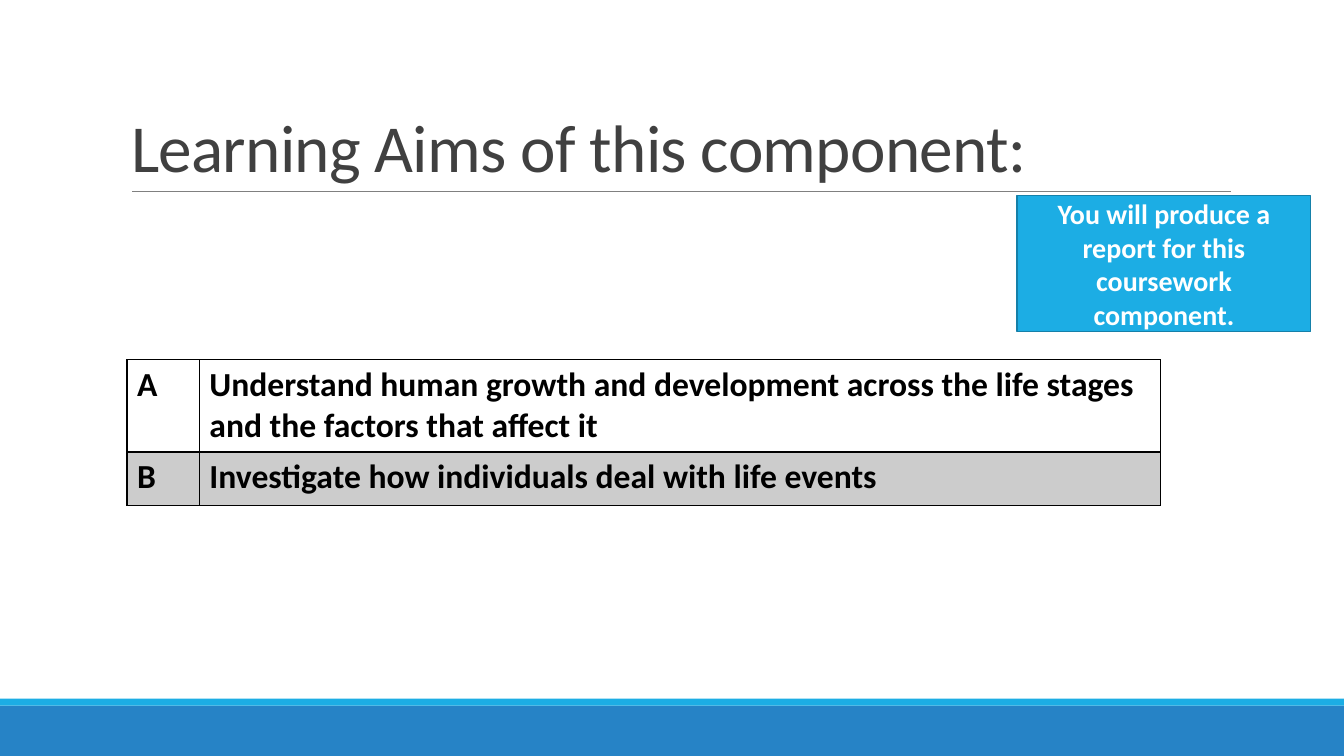
from lxml.etree import SubElement as Sub
from pptx import Presentation
from pptx.dml.color import RGBColor as Rgb
from pptx.enum.shapes import MSO_CONNECTOR as Conn, MSO_SHAPE as Kind
from pptx.enum.text import MSO_ANCHOR as Anchor, PP_ALIGN as Align
from pptx.oxml.ns import qn
from pptx.util import Inches, Pt

WIDE, HIGH = Inches(13.33), Inches(7.5)
FONT = "Calibri"
HUES = {
    "band": "2683C6", "sky": "1CADE4", "edge": "1580A9", "rule": "808080",
    "title": "404040", "ink": "000000", "shade": "CCCCCC", "white": "FFFFFF",
}
AIMS = [
    ("A", "Understand human growth and development across the life stages "
          "and the factors that affect it"),
    ("B", "Investigate how individuals deal with life events"),
]


def hue(name):
    return Rgb.from_string(HUES[name])


def area(x, y, w, h):
    """Turn percentages of the slide's size into lengths."""
    return (int(WIDE * x / 100), int(HIGH * y / 100),
            int(WIDE * w / 100), int(HIGH * h / 100))


def add_run(para, text, size, tint, bold=False):
    run = para.add_run()
    run.text = text
    font = run.font
    font.name, font.size, font.bold = FONT, Pt(size), bold
    font.color.rgb = hue(tint)
    return run


def add_box(slide, spot, fill, edge=None):
    box = slide.shapes.add_shape(Kind.RECTANGLE, *area(*spot))
    box.shadow.inherit = False
    box.fill.solid()
    box.fill.fore_color.rgb = hue(fill)
    if edge:
        box.line.color.rgb = hue(edge)
        box.line.width = Pt(1.25)
    else:
        box.line.fill.background()
    return box


def add_rule(slide, x, y, w):
    left, top, span, _ = area(x, y, w, 0)
    rule = slide.shapes.add_connector(
        Conn.STRAIGHT, left, top, left + span, top)
    rule.line.color.rgb = hue("rule")
    rule.line.width = Pt(0.5)
    Sub(rule.element.spPr, qn("a:effectLst"))


def set_title(slide, text, spot):
    title = slide.shapes.title
    title.left, title.top, title.width, title.height = area(*spot)
    frame = title.text_frame
    frame.word_wrap = True
    frame.vertical_anchor = Anchor.BOTTOM
    para = frame.paragraphs[0]
    para.alignment = Align.LEFT
    para.line_spacing = 0.85
    run = add_run(para, text, 48, "title")
    run.font._element.set("spc", "-50")


def add_note(slide, text, spot):
    frame = add_box(slide, spot, "sky", "edge").text_frame
    frame.word_wrap = True
    frame.vertical_anchor = Anchor.MIDDLE
    para = frame.paragraphs[0]
    para.alignment = Align.CENTER
    add_run(para, text, 20, "white", True)


def set_edges(cell, **widths):
    """Draw the cell's borders; widths are points keyed by L, R, T and B."""
    props = cell._tc.get_or_add_tcPr()
    for side, width in widths.items():
        line = Sub(props, qn("a:ln" + side), w=str(Pt(width)))
        Sub(Sub(line, qn("a:solidFill")), qn("a:srgbClr"), val=HUES["ink"])


def add_aims(slide, spot, cols, rows):
    """Draw the aims table; cols and rows are shares of its size."""
    left, top, wide, high = area(*spot)
    table = slide.shapes.add_table(
        len(rows), len(cols), left, top, wide, high).table
    table.first_row = table.horz_banding = False
    for col, share in zip(table.columns, cols):
        col.width = int(wide * share)
    for r, (row, share) in enumerate(zip(table.rows, rows)):
        row.height = int(high * share)
        for cell, text in zip(row.cells, AIMS[r]):
            set_edges(cell, L=1, R=1, T=2 if r else 1, B=1 if r else 2)
            if r:
                cell.fill.solid()
                cell.fill.fore_color.rgb = hue("shade")
            else:
                cell.fill.background()
            add_run(cell.text_frame.paragraphs[0], text, 24, "ink", True)


def main():
    deck = Presentation()
    deck.slide_width, deck.slide_height = WIDE, HIGH
    slide = deck.slides.add_slide(deck.slide_layouts[5])
    add_box(slide, (0, 93.33, 100, 6.67), "band")
    add_box(slide, (0, 92.4, 100, 0.93), "sky")
    add_rule(slide, 9.83, 25.33, 81.77)
    set_title(slide, "Learning Aims of this component:", (9, 4.13, 82.5, 21.2))
    add_aims(slide, (9.45, 47.6, 76.89, 19.2), (0.07, 0.93), (0.63, 0.37))
    add_note(slide, "You will produce a report for this coursework component.",
             (75.69, 25.87, 21.83, 18))
    deck.save("out.pptx")


if __name__ == "__main__":
    main()
